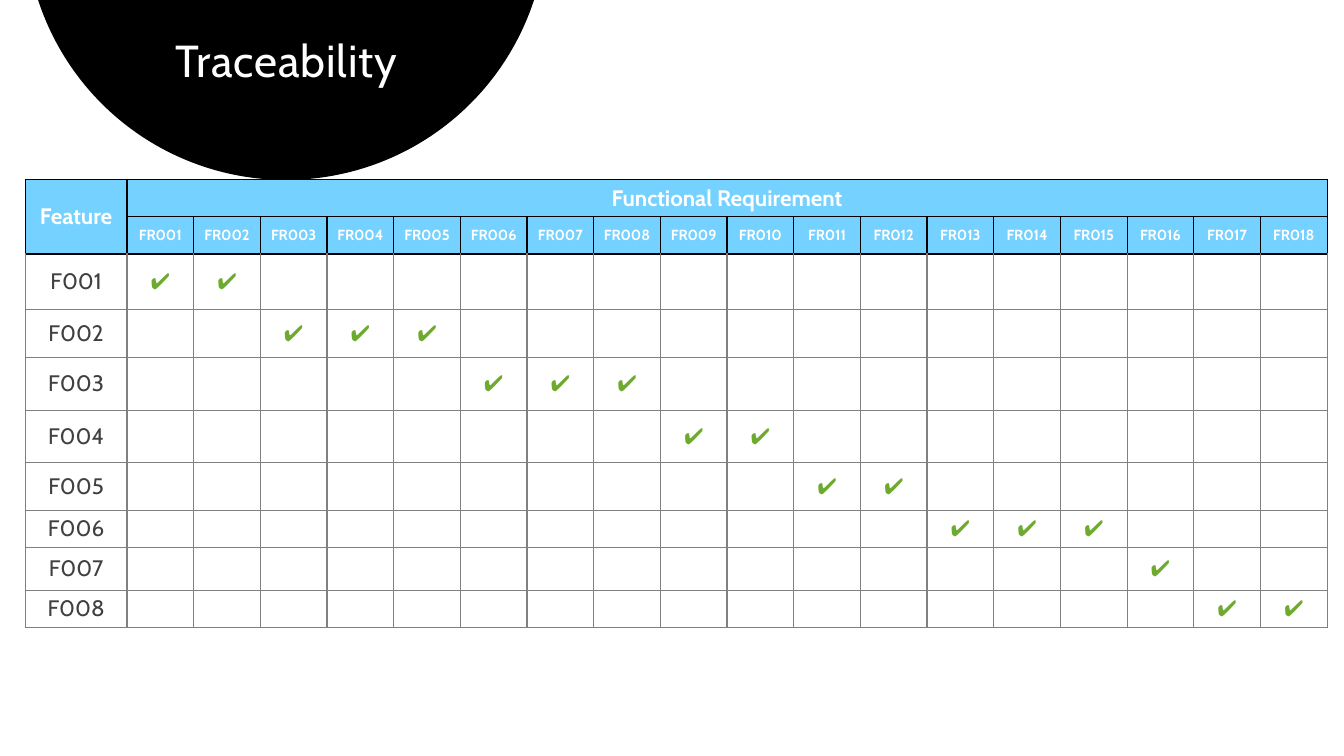
from dataclasses import dataclass

from lxml.etree import SubElement
from pptx import Presentation
from pptx.dml.color import RGBColor
from pptx.enum.shapes import MSO_SHAPE as Shape
from pptx.enum.text import MSO_ANCHOR as Anchor, MSO_AUTO_SIZE as AutoSize, PP_ALIGN as Align
from pptx.oxml.ns import qn
from pptx.util import Inches, Length, Pt

BLACK, WHITE, GRAY = "000000", "FFFFFF", "808080"
SKY, CHARCOAL, GREEN = "75D1FF", "404040", "6EAA2E"
REQUIREMENTS = 18
HEADER_ROWS = 2
HEADER_HEIGHT = 1.48
FEATURE_WIDTH = 4.04
TABLE_WIDTH = 51.68


@dataclass(frozen=True)
class Feature:
    code: str
    height: float
    first: int
    last: int


@dataclass(frozen=True)
class TextStyle:
    size: float
    color: str
    bold: bool = False


FEATURES = [
    Feature("F001", 2.2, 1, 2),
    Feature("F002", 1.91, 3, 5),
    Feature("F003", 2.1, 6, 8),
    Feature("F004", 2.07, 9, 10),
    Feature("F005", 1.9, 11, 12),
    Feature("F006", 1.47, 13, 15),
    Feature("F007", 1.7, 16, 16),
    Feature("F008", 1.47, 17, 18),
]
TITLE = TextStyle(32, WHITE)
HEADING = TextStyle(16, WHITE, True)
REQUIREMENT = TextStyle(10.5, WHITE, True)
CODE = TextStyle(16, CHARCOAL)
CHECK = TextStyle(16, GREEN, True)


def grid(units: float) -> Length:
    return Inches(units * 0.25)


def rgb(value: str) -> RGBColor:
    return RGBColor.from_string(value)


def set_all(target, values: dict) -> None:
    for name, value in values.items():
        setattr(target, name, value)


def write(tf, text: str, style: TextStyle):
    p = tf.paragraphs[0]
    p.alignment = Align.CENTER
    r = p.add_run()
    r.text = text
    set_all(r.font, {"name": "Cabin", "size": Pt(style.size), "bold": style.bold})
    r.font.color.rgb = rgb(style.color)
    return r


def style_cell(cell, fill: str, line: str, top: str) -> None:
    tc_pr = cell._tc.get_or_add_tcPr()
    for tag, color in {"a:lnL": line, "a:lnR": line, "a:lnT": top, "a:lnB": line}.items():
        ln = SubElement(tc_pr, qn(tag), w=str(Pt(1)))
        SubElement(SubElement(ln, qn("a:solidFill")), qn("a:srgbClr"), val=color)
    cell.fill.solid()
    cell.fill.fore_color.rgb = rgb(fill)
    set_all(cell, {"vertical_anchor": Anchor.MIDDLE,
                   "margin_left": grid(0.2), "margin_right": grid(0.2)})


def add_title(s) -> None:
    sp = s.shapes.title
    set_all(sp, {"left": grid(2.44), "top": grid(-0.32),
                 "width": grid(17.88), "height": grid(4)})
    tf = sp.text_frame
    set_all(tf, {"margin_left": grid(0.64), "margin_right": grid(0.64),
                 "margin_top": grid(1.84), "margin_bottom": grid(0.2),
                 "word_wrap": True, "vertical_anchor": Anchor.MIDDLE,
                 "auto_size": AutoSize.SHAPE_TO_FIT_TEXT})
    r = write(tf, "Traceability", TITLE)
    r.font._element.set("spc", "60")
    tf.paragraphs[0].line_spacing = 0.9


def add_circle(s) -> None:
    sp = s.shapes.add_shape(Shape.OVAL, grid(1), grid(-13.56), grid(20.7), grid(20.7))
    sp.shadow.inherit = False
    sp.fill.solid()
    sp.fill.fore_color.rgb = rgb(BLACK)
    sp.line.fill.background()
    s.shapes.title._element.addprevious(sp._element)


def add_matrix(s) -> None:
    heights = [HEADER_HEIGHT] * HEADER_ROWS + [f.height for f in FEATURES]
    table = s.shapes.add_table(len(heights), REQUIREMENTS + 1, grid(1), grid(7.12),
                               grid(TABLE_WIDTH), grid(sum(heights))).table
    set_all(table, {"first_row": False, "horz_banding": False})
    for row, height in zip(table.rows, heights):
        row.height = grid(height)
    for column in table.columns:
        column.width = grid((TABLE_WIDTH - FEATURE_WIDTH) / REQUIREMENTS)
    table.columns[0].width = grid(FEATURE_WIDTH)

    for i, row in enumerate(table.rows):
        header = i < HEADER_ROWS
        for cell in row.cells:
            style_cell(cell, SKY if header else WHITE, BLACK if header else GRAY,
                       BLACK if i <= HEADER_ROWS else GRAY)

    table.cell(0, 0).merge(table.cell(1, 0))
    table.cell(0, 1).merge(table.cell(0, REQUIREMENTS))
    write(table.cell(0, 0).text_frame, "Feature", HEADING)
    write(table.cell(0, 1).text_frame, "Functional Requirement", HEADING)
    for n in range(1, REQUIREMENTS + 1):
        write(table.cell(1, n).text_frame, f"FR{n:03}", REQUIREMENT)

    for i, feature in enumerate(FEATURES, HEADER_ROWS):
        write(table.cell(i, 0).text_frame, feature.code, CODE)
        for n in range(1, REQUIREMENTS + 1):
            tf = table.cell(i, n).text_frame
            if feature.first <= n <= feature.last:
                write(tf, "✔", CHECK)
            else:
                SubElement(tf.paragraphs[0]._p, qn("a:endParaRPr"), sz="1200")


def main() -> None:
    prs = Presentation()
    set_all(prs, {"slide_width": grid(53.33), "slide_height": grid(30)})
    s = prs.slides.add_slide(prs.slide_layouts[5])
    add_title(s)
    add_circle(s)
    add_matrix(s)
    prs.save("out.pptx")


if __name__ == "__main__":
    main()
